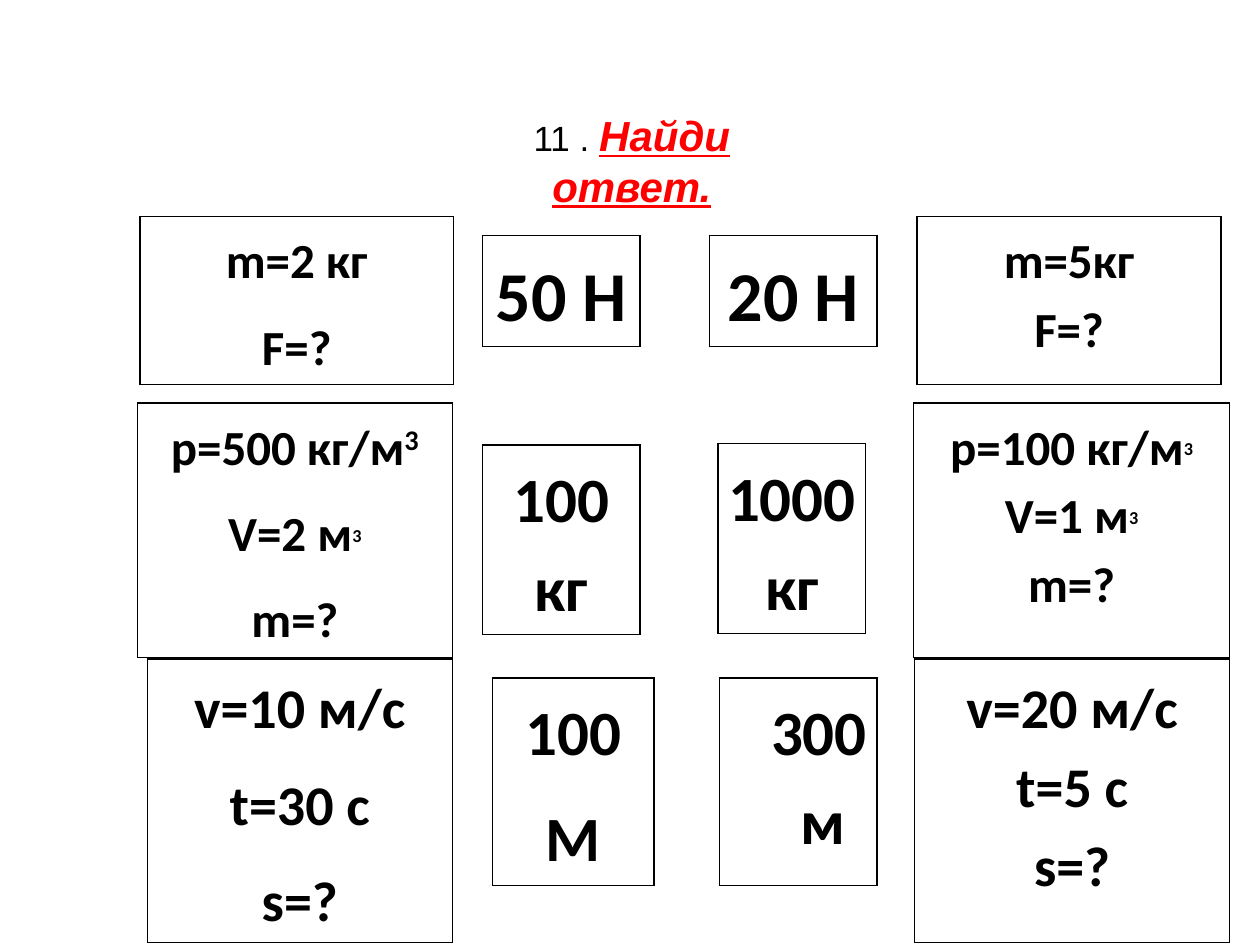
"""Build the slide where pupils match physics tasks with their answers."""
import pptx
import pptx.dml.color
import pptx.enum.text
import pptx.oxml
import pptx.oxml.ns
import pptx.util
from pptx.util import Inches

ALIGN = pptx.enum.text.PP_ALIGN
BLACK = "000000"
RED = "FF0000"


def color(hex_code):
    """Return the colour for a hex string."""
    return pptx.dml.color.RGBColor.from_string(hex_code)


def add_run(paragraph, text, size, font_name, bold=True, hex_code=BLACK, superscript=False):
    """Append one formatted run and return its font."""
    run = paragraph.add_run()
    run.text = text
    font = run.font
    font.size = pptx.util.Pt(size)
    font.name = font_name
    font.bold = bold
    font.color.rgb = color(hex_code)
    if superscript:
        run._r.get_or_add_rPr().set("baseline", "30000")
    return font


def set_title(slide):
    """Fill the title placeholder with the task number and heading."""
    title = slide.shapes.title
    title.left, title.top = Inches(3.46), Inches(0.8)
    title.width, title.height = Inches(3.11), Inches(0.83)
    frame = title.text_frame
    frame.word_wrap = False
    frame.auto_size = pptx.enum.text.MSO_AUTO_SIZE.NONE
    frame.vertical_anchor = pptx.enum.text.MSO_ANCHOR.TOP
    frame.margin_top = Inches(0.07)
    heading = frame.paragraphs[0]
    heading.alignment = ALIGN.CENTER
    add_run(heading, "11 . ", 20, "Arial", bold=False)
    emphasis = add_run(heading, "Найди ответ.", 24, "Arial", hex_code=RED)
    emphasis.italic = True
    emphasis.underline = True


def set_borders(cell, visible_sides):
    """Draw black borders on the visible sides and none on the others."""
    properties = cell._tc.get_or_add_tcPr()
    for position, side in enumerate("LRTB"):
        paint = "<a:noFill/>"
        if side in visible_sides:
            paint = f'<a:solidFill><a:srgbClr val="{BLACK}"/></a:solidFill>'
        border = pptx.oxml.parse_xml(
            f'<a:ln{side} w="12190" {pptx.oxml.ns.nsdecls("a")}>{paint}</a:ln{side}>'
        )
        properties.insert(position, border)


def fill_card(cell, lines, size, space_after=0, indents=None):
    """Write lines in a cell; a tuple holds a line and its exponent size."""
    cell.margin_left = cell.margin_right = Inches(0.07)
    cell.margin_top = cell.margin_bottom = Inches(0.05)
    for index, line in enumerate(lines):
        frame = cell.text_frame
        paragraph = frame.add_paragraph() if index else frame.paragraphs[0]
        paragraph.line_spacing = 1.15
        paragraph.space_after = pptx.util.Pt(space_after)
        paragraph.alignment = ALIGN.LEFT if indents else ALIGN.CENTER
        if indents:
            paragraph._p.get_or_add_pPr().set("marL", str(Inches(indents[index])))
        text, exponent_size = line if isinstance(line, tuple) else (line, None)
        add_run(paragraph, text, size, "Calibri")
        if exponent_size:
            add_run(paragraph, "3", exponent_size, "Calibri", superscript=True)


def add_cards(slide, left, top, height, widths, size, first, second=None, indents=None):
    """Add one card, or two cards with an open gap between them, as a table."""
    table = slide.shapes.add_table(
        1, len(widths), Inches(left), Inches(top), Inches(sum(widths)), Inches(height)
    ).table
    table.first_row = False
    table.horz_banding = False
    for column, width in enumerate(widths):
        table.columns[column].width = Inches(width)
        cell = table.cell(0, column)
        cell.fill.background()
        set_borders(cell, "LR" if column == 1 else "LRTB")
    fill_card(table.cell(0, 0), first, size, space_after=10)
    if second:
        fill_card(table.cell(0, 2), second, size, indents=indents)


def main():
    """Create the presentation and save it."""
    deck = pptx.Presentation()
    deck.slide_width, deck.slide_height = Inches(10), Inches(7.5)
    slide = deck.slides.add_slide(deck.slide_layouts[5])
    set_title(slide)

    add_cards(slide, 1.11, 1.72, 1.21, (2.49, 3.68, 2.41), 28,
              ["m=2 кг", "F=?"], ["m=5кг", "F=?"])
    add_cards(slide, 3.83, 1.87, 0.77, (1.25, 0.55, 1.33), 40, ["50 H"], ["20 H"])

    add_cards(slide, 1.09, 3.2, 1.89, (2.5, 3.66, 2.51), 28,
              [("p=500 кг/м", 28), ("V=2 м", 18), "m=?"],
              [("p=100 кг/м", 18), ("V=1 м", 18), "m=?"])
    add_cards(slide, 3.83, 3.53, 1.38, (1.25,), 36, ["100 кг"])
    add_cards(slide, 5.7, 3.52, 1.38, (1.17,), 36, ["1000 кг"])

    add_cards(slide, 1.17, 5.23, 2.12, (2.42, 3.67, 2.5), 32,
              ["v=10 м/с", "t=30 с", "s=?"], ["v=20 м/с", "t=5 с", "s=?"])
    add_cards(slide, 3.91, 5.38, 1.52, (1.28, 0.52, 1.25), 36,
              ["100", "М"], ["300", "м"], indents=(0.34, 0.57))

    deck.save("out.pptx")


if __name__ == "__main__":
    main()
